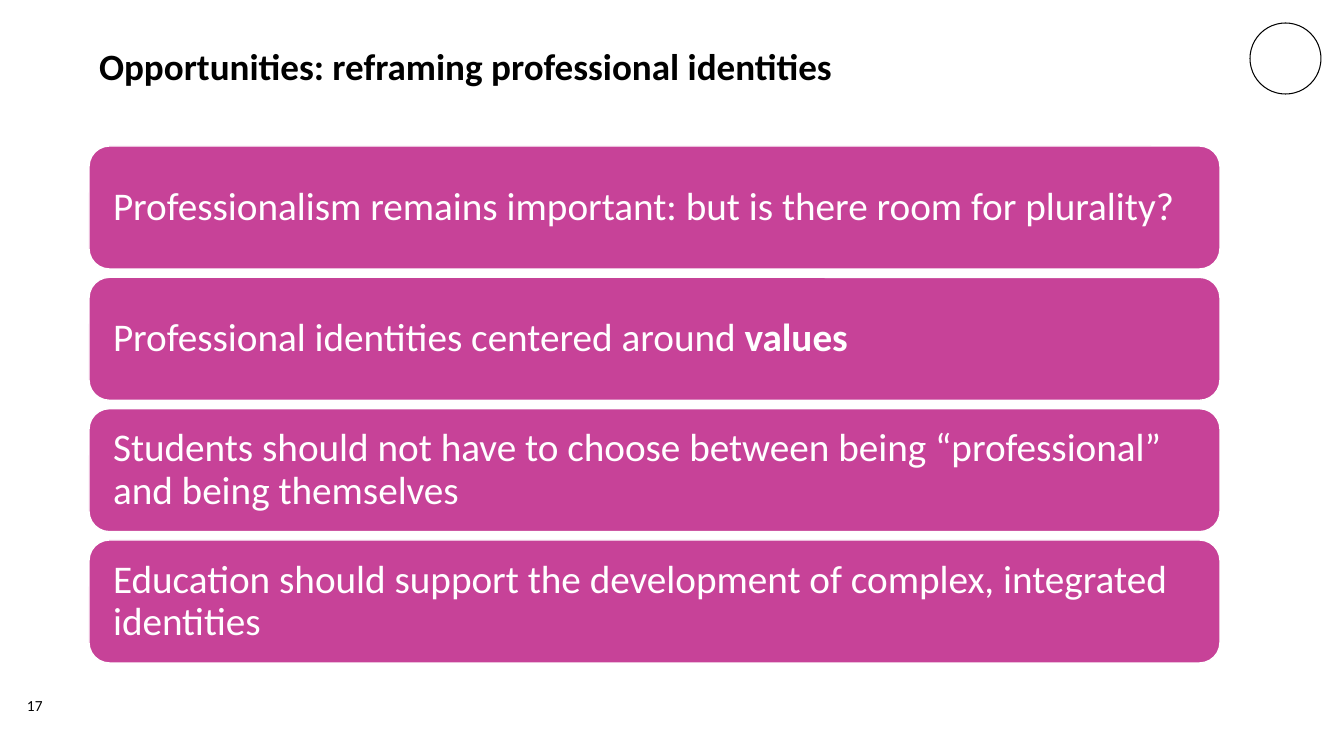
from pptx import Presentation
from pptx.dml.color import RGBColor
from pptx.enum.shapes import MSO_SHAPE
from pptx.enum.text import MSO_ANCHOR, MSO_AUTO_SIZE, PP_ALIGN
from pptx.util import Pt

PX = 914400 / 100.8
FONT = "Calibri"
COLORS = {"text": "000000", "card": "C74298", "white": "FFFFFF"}
TOP, MIDDLE = MSO_ANCHOR.TOP, MSO_ANCHOR.MIDDLE
LEFT, NO_FIT = PP_ALIGN.LEFT, MSO_AUTO_SIZE.NONE
ROUNDED, OVAL = MSO_SHAPE.ROUNDED_RECTANGLE, MSO_SHAPE.OVAL


def px(*lengths):
    return [round(length * PX) for length in lengths]


def write(box, runs, size, color, anchor, margins, line_spacing):
    """Fill a shape with one left-aligned paragraph of (text, bold) runs."""
    frame = box.text_frame
    left, top, right, bottom = px(*margins)
    layout = {"word_wrap": True, "auto_size": NO_FIT, "vertical_anchor": anchor,
              "margin_left": left, "margin_top": top,
              "margin_right": right, "margin_bottom": bottom}
    for key, value in layout.items():
        setattr(frame, key, value)
    paragraph = frame.paragraphs[0]
    paragraph.alignment = LEFT
    paragraph.line_spacing = line_spacing
    for text, bold in runs:
        run = paragraph.add_run()
        run.text = text
        for key, value in {"name": FONT, "size": Pt(size), "bold": bold}.items():
            setattr(run.font, key, value)
        run.font.color.rgb = RGBColor.from_string(COLORS[color])


presentation = Presentation()
presentation.slide_width, presentation.slide_height = px(1344, 756)
slide = presentation.slides.add_slide(presentation.slide_layouts[5])
shapes = slide.shapes

# Corner ring
ring = shapes.add_shape(OVAL, *px(1250, 23, 71, 71))
ring.shadow.inherit = False
ring.fill.background()
ring.line.color.rgb = RGBColor.from_string(COLORS["text"])
ring.line.width = Pt(0.75)

# Title
title = shapes.title
title.left, title.top, title.width, title.height = px(89, 38, 818, 103)
write(title, [("Opportunities: reframing professional identities", True)],
      26.5, "text", TOP, (10, 5, 10, 5), 1.0)

# Slide number
page_number = shapes.add_textbox(*px(27, 693, 64, 27))
write(page_number, [("17", False)], 11, "text", MIDDLE, (0, 5, 10, 5), 0.9)

# Statement cards, spread evenly from the first top to the last
statements = [
    [("Professionalism remains important: but is there room for plurality?", False)],
    [("Professional identities centered around ", False), ("values", True)],
    [("Students should not have to choose between being “professional” "
      "and being themselves", False)],
    [("Education should support the development of complex, integrated identities",
      False)],
]
FIRST_TOP, LAST_TOP = 146, 540
for index, statement in enumerate(statements):
    top = FIRST_TOP + (LAST_TOP - FIRST_TOP) * index / (len(statements) - 1)
    card = shapes.add_shape(ROUNDED, *px(89, top, 1131, 123))
    card.shadow.inherit = False
    card.fill.solid()
    card.fill.fore_color.rgb = RGBColor.from_string(COLORS["card"])
    card.line.color.rgb = RGBColor.from_string(COLORS["white"])
    card.line.width = Pt(1)
    write(card, statement, 28, "white", MIDDLE, (18, 18, 18, 18), 0.9)

presentation.save("out.pptx")
